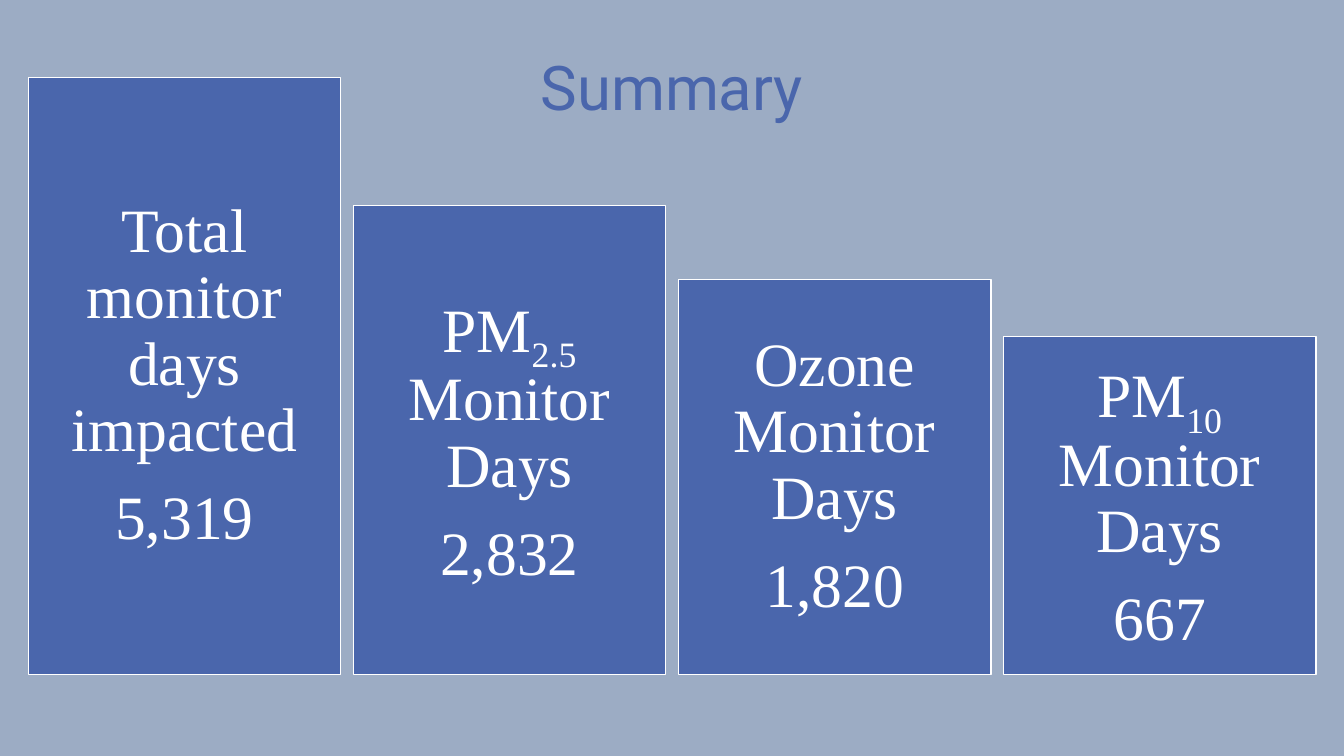
from pptx import Presentation
from pptx.dml.color import RGBColor
from pptx.enum.shapes import MSO_SHAPE as Shape
from pptx.enum.text import MSO_ANCHOR as Anchor, PP_ALIGN as Align
from pptx.util import Pt

BACKGROUND = RGBColor(0x9C, 0xAC, 0xC4)
BLUE = RGBColor(0x4A, 0x66, 0xAC)
WHITE = RGBColor(0xFF, 0xFF, 0xFF)

BAR_LEFT, BAR_STEP, BAR_WIDTH, BAR_BOTTOM = 20.2, 232.2, 223.2, 481.7
INSET = 13

# Height, label as (text, is subscript) runs, value
BARS = [
    (426.2, [("Total monitor days impacted", False)], "5,319"),
    (334.8, [("PM", False), ("2.5", True), (" Monitor Days", False)], "2,832"),
    (282.2, [("Ozone Monitor Days", False)], "1,820"),
    (241.2, [("PM", False), ("10", True), (" Monitor Days", False)], "667"),
]


def format_paragraph(p):
    p.alignment = Align.CENTER
    p.line_spacing = 0.9


def add_run(p, text, font, color, subscript=False):
    r = p.add_run()
    r.text = text
    r.font.name = font
    r.font.size = Pt(44)
    r.font.color.rgb = color
    if subscript:
        r.font._element.set("baseline", "-25000")


def set_title(s, text):
    title = s.shapes.title
    title.left, title.top = Pt(66), Pt(28.8)
    title.width, title.height = Pt(828), Pt(72)
    tf = title.text_frame
    tf.vertical_anchor = Anchor.MIDDLE
    p = tf.paragraphs[0]
    format_paragraph(p)
    add_run(p, text, "Roboto", BLUE)


def add_bar(s, left, height, label, value):
    sp = s.shapes.add_shape(Shape.RECTANGLE, Pt(left), Pt(BAR_BOTTOM - height),
                            Pt(BAR_WIDTH), Pt(height))
    sp.shadow.inherit = False
    sp.fill.solid()
    sp.fill.fore_color.rgb = BLUE
    sp.line.color.rgb = WHITE
    sp.line.width = Pt(1)

    tf = sp.text_frame
    tf.word_wrap = True
    tf.vertical_anchor = Anchor.MIDDLE
    tf.margin_left = tf.margin_right = Pt(INSET)
    tf.margin_top = tf.margin_bottom = Pt(INSET)
    for p, runs in ((tf.paragraphs[0], label),
                    (tf.add_paragraph(), [(value, False)])):
        format_paragraph(p)
        p.space_after = Pt(15.4)
        for text, subscript in runs:
            add_run(p, text, "Times New Roman", WHITE, subscript)


def main():
    prs = Presentation()
    prs.slide_width, prs.slide_height = Pt(960), Pt(540)
    s = prs.slides.add_slide(prs.slide_layouts[5])
    s.background.fill.solid()
    s.background.fill.fore_color.rgb = BACKGROUND

    set_title(s, "Summary")
    for i, (height, label, value) in enumerate(BARS):
        add_bar(s, BAR_LEFT + i * BAR_STEP, height, label, value)
    prs.save("out.pptx")


if __name__ == "__main__":
    main()
